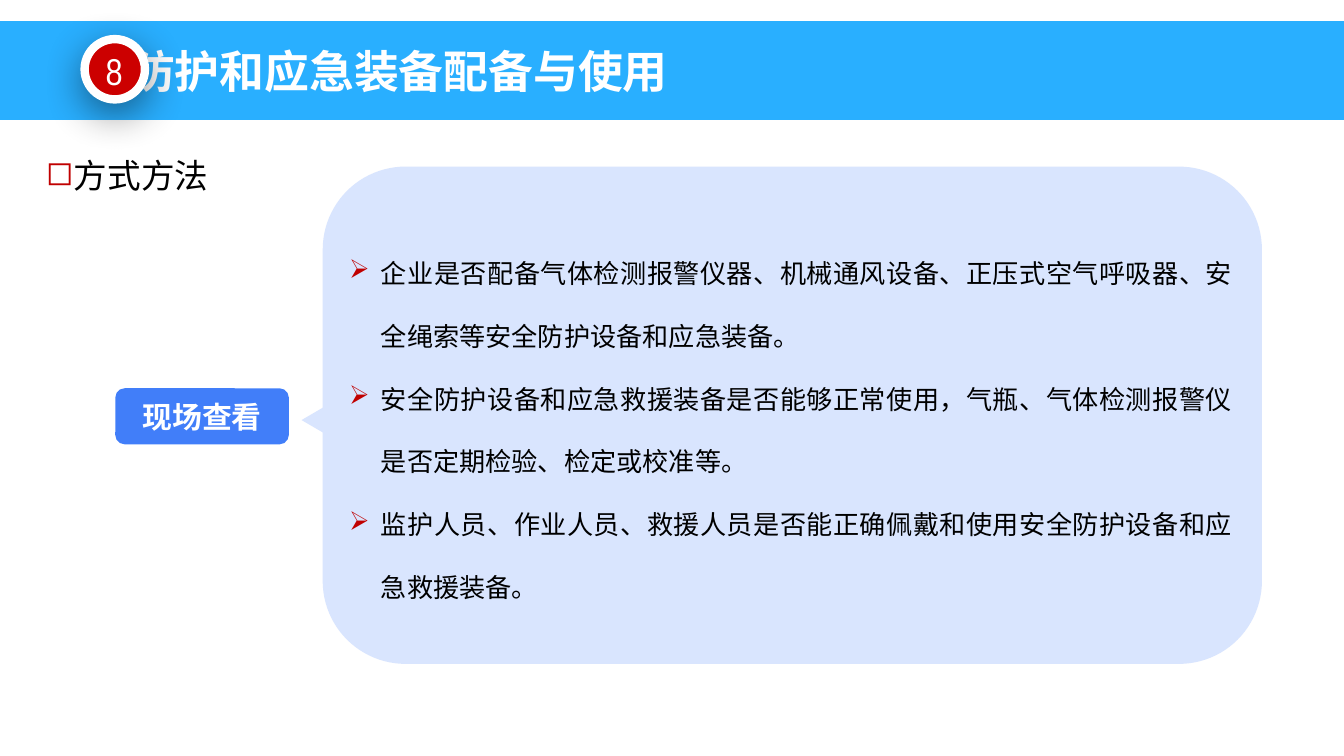
import pptx
import pptx.dml.color
import pptx.enum.shapes
import pptx.enum.text
import pptx.oxml
import pptx.oxml.ns
import pptx.util
import lxml.etree

Cm = pptx.util.Cm
Pt = pptx.util.Pt
Shape = pptx.enum.shapes.MSO_SHAPE
Align = pptx.enum.text.PP_ALIGN
Anchor = pptx.enum.text.MSO_ANCHOR
qn = pptx.oxml.ns.qn

COLOURS = {
    "band": "29AFFF",
    "label": "417EF9",
    "panel": "D9E5FE",
    "badge": "CC0000",
    "bullet": "C00000",
    "white": "FFFFFF",
    "black": "000000",
}
CHECKS = [
    "企业是否配备气体检测报警仪器、机械通风设备、正压式空气呼吸器、安全绳索等安全防护设备和应急装备。",
    "安全防护设备和应急救援装备是否能够正常使用，气瓶、气体检测报警仪是否定期检验、检定或校准等。",
    "监护人员、作业人员、救援人员是否能正确佩戴和使用安全防护设备和应急救援装备。",
]


class SlideBuilder:
    """Hold the style and the current slide, and add elements to it."""

    def __init__(self, slide, font="Noto Sans CJK SC"):
        self.slide = slide
        self.font = font

    def colour(self, name):
        return pptx.dml.color.RGBColor.from_string(COLOURS[name])

    def shape(self, kind, left, top, width, height, fill):
        shape = self.slide.shapes.add_shape(kind, Cm(left), Cm(top), Cm(width), Cm(height))
        shape.shadow.inherit = False
        shape.fill.solid()
        shape.fill.fore_color.rgb = self.colour(fill)
        shape.line.fill.background()
        return shape

    def text_box(self, left, top, width, height):
        box = self.slide.shapes.add_textbox(Cm(left), Cm(top), Cm(width), Cm(height))
        box.text_frame.word_wrap = True
        return box

    def margins(self, shape, horizontal, vertical):
        frame = shape.text_frame
        frame.margin_left = frame.margin_right = Cm(horizontal)
        frame.margin_top = frame.margin_bottom = Cm(vertical)

    def add_text(self, shape, texts, size, colour, align=Align.LEFT, anchor=Anchor.MIDDLE,
                 bold=False, font=None, spacing=None, bullet=None):
        frame = shape.text_frame
        frame.vertical_anchor = anchor
        for index, text in enumerate(texts):
            paragraph = frame.add_paragraph() if index else frame.paragraphs[0]
            paragraph.text = text
            paragraph.alignment = align
            if spacing:
                paragraph.line_spacing = Pt(spacing)
            if bullet:
                self.bullet(paragraph, *bullet)
            self.style(paragraph, size, colour, bold, font or self.font)

    def style(self, paragraph, size, colour, bold, font):
        paragraph.font.size = Pt(size)
        paragraph.font.bold = bold
        paragraph.font.color.rgb = self.colour(colour)
        paragraph.font.name = font
        defaults = paragraph._p.pPr.find(qn("a:defRPr"))
        lxml.etree.SubElement(defaults, qn("a:ea"), typeface=font)

    def bullet(self, paragraph, character, margin, indent):
        properties = paragraph._p.get_or_add_pPr()
        properties.set("marL", str(Cm(margin)))
        properties.set("indent", str(Cm(indent)))
        colour = lxml.etree.SubElement(properties, qn("a:buClr"))
        lxml.etree.SubElement(colour, qn("a:srgbClr"), val=COLOURS["bullet"])
        lxml.etree.SubElement(properties, qn("a:buChar"), char=character)

    def shadow(self, shape, blur, distance, angle, opacity):
        effects = shape._element.spPr.find(qn("a:effectLst"))
        outer = lxml.etree.SubElement(
            effects, qn("a:outerShdw"), blurRad=str(Pt(blur)), dist=str(Pt(distance)),
            dir=str(angle * 60000), algn="ctr", rotWithShape="0")
        colour = lxml.etree.SubElement(outer, qn("a:srgbClr"), val=COLOURS["black"])
        lxml.etree.SubElement(colour, qn("a:alpha"), val=str(opacity * 1000))


def main():
    presentation = pptx.Presentation()
    presentation.slide_width = Cm(25.4)
    presentation.slide_height = Cm(14.29)
    builder = SlideBuilder(presentation.slides.add_slide(presentation.slide_layouts[6]))

    heading = builder.text_box(0.69, 2.64, 9.83, 1.12)
    builder.margins(heading, 0.18, 0.1)
    builder.add_text(heading, ["方式方法"], 18, "black", anchor=Anchor.TOP,
                     spacing=27, bullet=("◻", 0.23, -0.71))

    label = builder.shape(Shape.ROUNDED_RECTANGLE, 2.18, 7.34, 3.28, 1.06, "label")
    builder.add_text(label, ["现场查看"], 16, "white", Align.CENTER, bold=True)

    builder.shape(Shape.ROUNDED_RECTANGLE, 6.1, 3.15, 17.75, 9.4, "panel")
    checks = builder.text_box(6.35, 4.14, 17.2, 7.44)
    builder.add_text(checks, CHECKS, 14, "black", Align.JUSTIFY, Anchor.TOP,
                     spacing=33.7, bullet=("➢", 0.6, -0.6))
    pointer = builder.shape(Shape.ISOSCELES_TRIANGLE, 5.66, 7.7, 0.56, 0.48, "panel")
    pointer.rotation = 270

    band = builder.shape(Shape.RECTANGLE, 0, 0.4, 25.4, 1.87, "band")
    builder.margins(band, 0.18, 0.1)
    band.text_frame.margin_left = Cm(2.46)
    builder.add_text(band, ["防护和应急装备配备与使用"], 24, "white", bold=True)

    badge = builder.shape(Shape.OVAL, 1.6, 0.74, 1.14, 1.14, "badge")
    badge.line.color.rgb = builder.colour("white")
    badge.line.width = Pt(4.5)
    builder.shadow(badge, blur=22, distance=6, angle=90, opacity=45)
    number = builder.text_box(1.78, 0.81, 0.76, 1.04)
    builder.margins(number, 0.18, 0.1)
    number.text_frame.word_wrap = False
    builder.add_text(number, ["8"], 20, "white", Align.CENTER, font="Arial Narrow")

    presentation.save("out.pptx")


if __name__ == "__main__":
    main()
